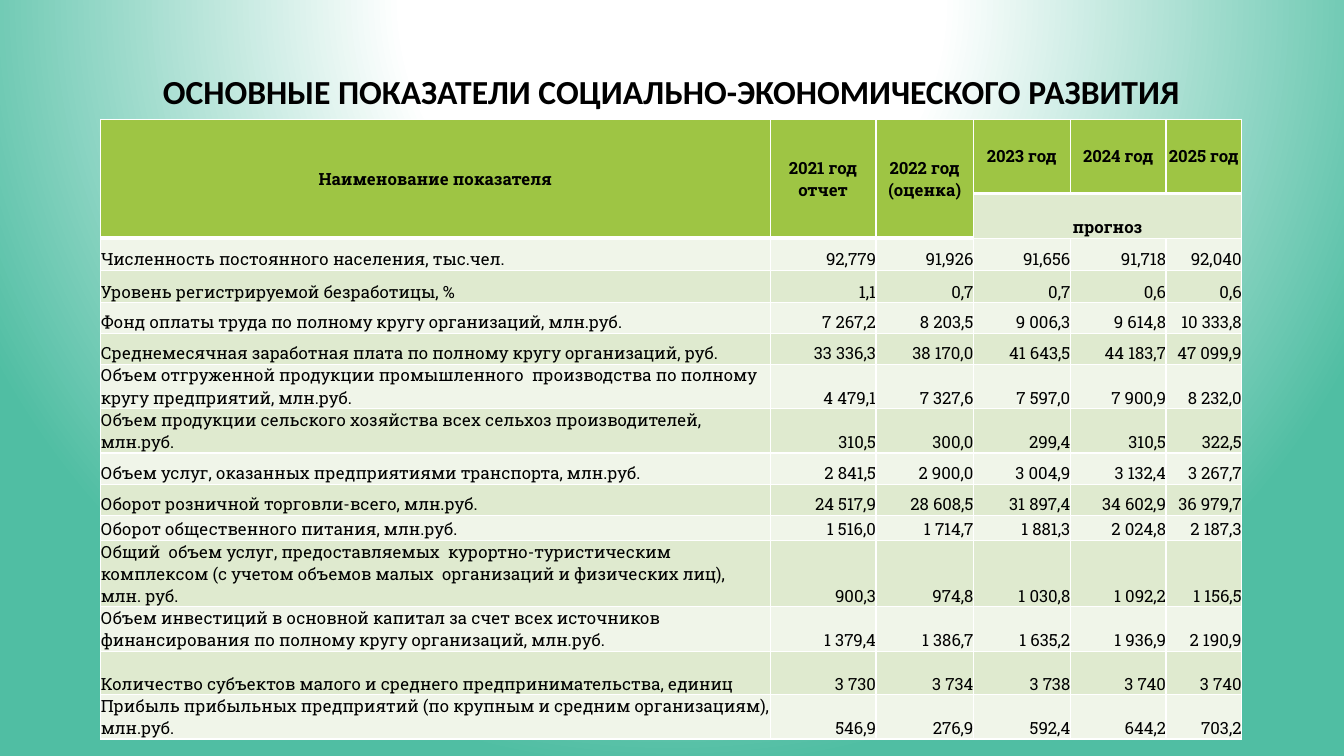
from lxml import etree
from pptx import Presentation
from pptx import util as u
from pptx.dml.color import RGBColor
from pptx.enum import text
from pptx.oxml import parse_xml
from pptx.oxml.ns import nsdecls, qn

Pt = u.Pt
BLACK = RGBColor(0x00, 0x00, 0x00)
GREEN = RGBColor(0x9E, 0xC5, 0x44)
PALE = RGBColor(0xF0, 0xF5, 0xE9)
MINT = RGBColor(0xDF, 0xEA, 0xCF)
WHITE = RGBColor(0xFF, 0xFF, 0xFF)
TEAL = RGBColor(0x50, 0xBE, 0xA3)

HEAD = [
    ["Наименование показателя", "2021 год отчет", "2022 год (оценка)",
     "2023 год", "2024 год", "2025 год"],
    ["", "", "", "прогноз", "", ""],
]
DATA = [
    ["Численность постоянного населения, тыс.чел.",
     "92,779", "91,926", "91,656", "91,718", "92,040"],
    ["Уровень регистрируемой безработицы, %",
     "1,1", "0,7", "0,7", "0,6", "0,6"],
    ["Фонд оплаты труда по полному кругу организаций, млн.руб.",
     "7 267,2", "8 203,5", "9 006,3", "9 614,8", "10 333,8"],
    ["Среднемесячная заработная плата по полному кругу организаций, руб.",
     "33 336,3", "38 170,0", "41 643,5", "44 183,7", "47 099,9"],
    ["Объем отгруженной продукции промышленного  производства по полному "
     "кругу предприятий, млн.руб.",
     "4 479,1", "7 327,6", "7 597,0", "7 900,9", "8 232,0"],
    ["Объем продукции сельского хозяйства всех сельхоз производителей, млн.руб.",
     "310,5", "300,0", "299,4", "310,5", "322,5"],
    ["Объем услуг, оказанных предприятиями транспорта, млн.руб.",
     "2 841,5", "2 900,0", "3 004,9", "3 132,4", "3 267,7"],
    ["Оборот розничной торговли-всего, млн.руб.",
     "24 517,9", "28 608,5", "31 897,4", "34 602,9", "36 979,7"],
    ["Оборот общественного питания, млн.руб.",
     "1 516,0", "1 714,7", "1 881,3", "2 024,8", "2 187,3"],
    ["Общий  объем услуг, предоставляемых  курортно-туристическим  комплексом "
     "(с учетом объемов малых  организаций и физических лиц), млн. руб.",
     "900,3", "974,8", "1 030,8", "1 092,2", "1 156,5"],
    ["Объем инвестиций в основной капитал за счет всех источников "
     "финансирования по полному кругу организаций, млн.руб.",
     "1 379,4", "1 386,7", "1 635,2", "1 936,9", "2 190,9"],
    ["Количество субъектов малого и среднего предпринимательства, единиц",
     "3 730", "3 734", "3 738", "3 740", "3 740"],
    ["Прибыль прибыльных предприятий (по крупным и средним организациям), млн.руб.",
     "546,9", "276,9", "592,4", "644,2", "703,2"],
]
ROWS = HEAD + DATA
WIDE = [478.2, 75.6, 69.6, 69.2, 68.4, 54]
TALL = [53, 32, 23, 23, 22, 22, 31.7, 31.7, 22.5, 22, 18, 47.5, 31.7, 31, 31.7]


def style(para, name, size, bold, align):
    para.alignment = align
    # Empty cells take their height from the end mark
    for font in [para.font] + [run.font for run in para.runs]:
        font.name, font.size, font.bold = name, Pt(size), bold
        font.color.rgb = BLACK


def edge(cell, side, width):
    line = etree.SubElement(cell._tc.get_or_add_tcPr(), qn("a:ln" + side),
                            w=str(Pt(width)))
    fill = etree.SubElement(line, qn("a:solidFill"))
    etree.SubElement(fill, qn("a:srgbClr"), val=str(WHITE))


deck = Presentation()
deck.slide_width, deck.slide_height = Pt(960), Pt(540)
slide = deck.slides.add_slide(deck.slide_layouts[6])

# Background: radial glow from above the top edge
slide.background.fill.solid()
back = slide.element.find(".//" + qn("p:bgPr"))
stops = "".join(f'<a:gs pos="{pos}"><a:srgbClr val="{tint}"/></a:gs>'
                for pos, tint in [(0, WHITE), (35000, WHITE), (100000, TEAL)])
back.replace(back[0], parse_xml(
    f'<a:gradFill {nsdecls("a")} rotWithShape="1"><a:gsLst>{stops}</a:gsLst>'
    '<a:path path="circle">'
    '<a:fillToRect l="50000" t="-80000" r="50000" b="180000"/>'
    '</a:path></a:gradFill>'))

# Title
title = slide.shapes.add_textbox(Pt(72), Pt(48), Pt(815), Pt(37.4)).text_frame
title.word_wrap = True
title.vertical_anchor = text.MSO_ANCHOR.MIDDLE
title.text = "ОСНОВНЫЕ ПОКАЗАТЕЛИ СОЦИАЛЬНО-ЭКОНОМИЧЕСКОГО РАЗВИТИЯ"
title.paragraphs[0].line_spacing = 0.9
style(title.paragraphs[0], "Calibri", 24, True, text.PP_ALIGN.CENTER)

# Table grid
grid = slide.shapes.add_table(len(ROWS), len(WIDE), Pt(72), Pt(85.2),
                              Pt(sum(WIDE)), Pt(sum(TALL))).table
grid.first_row = grid.horz_banding = False
for col, width in zip(grid.columns, WIDE):
    col.width = Pt(width)
for row, height in zip(grid.rows, TALL):
    row.height = Pt(height)

# Cells
for r, words in enumerate(ROWS):
    for c, word in enumerate(words):
        cell = grid.cell(r, c)
        top = r == 0 or (r == 1 and c < 3)
        cell.text_frame.text = word
        if r < len(HEAD):
            align = text.PP_ALIGN.CENTER
        else:
            align = text.PP_ALIGN.RIGHT if c else text.PP_ALIGN.LEFT
        style(cell.text_frame.paragraphs[0], "Roboto Slab", 12,
              r < len(HEAD), align)
        cell.margin_left = cell.margin_right = 0
        cell.margin_top = cell.margin_bottom = 0
        cell.vertical_anchor = (text.MSO_ANCHOR.MIDDLE if top
                                else text.MSO_ANCHOR.BOTTOM)
        for side in "LRTB":
            thick = (side == "B" and top) or (side == "T" and r == 1)
            edge(cell, side, 3 if thick else 1)
        cell.fill.solid()
        cell.fill.fore_color.rgb = GREEN if top else MINT if r % 2 else PALE

# Merged headings
for c in range(3):
    grid.cell(0, c).merge(grid.cell(1, c))
grid.cell(1, 3).merge(grid.cell(1, 5))

deck.save("out.pptx")
